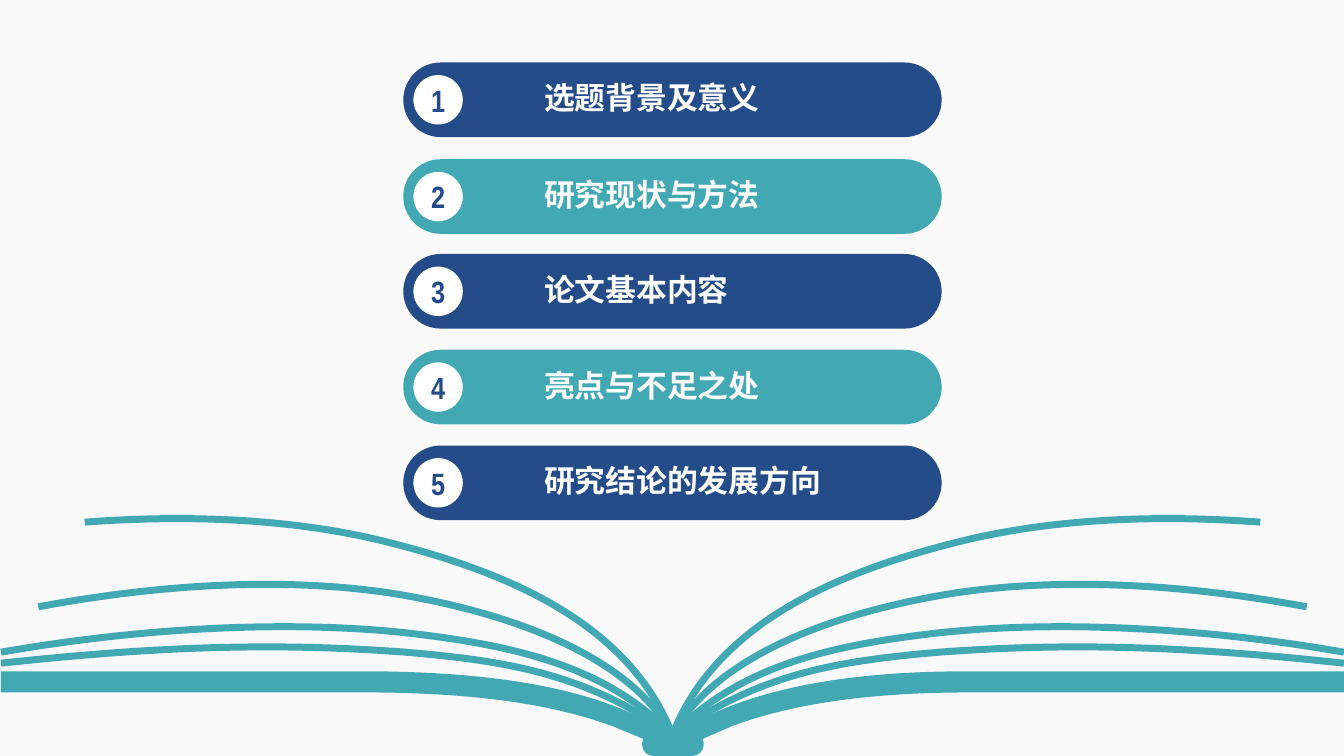
from pptx import Presentation
from pptx import util as u
from pptx.dml.color import RGBColor
from pptx.enum import shapes, text
from pptx.oxml.ns import qn
from lxml import etree

NAVY = RGBColor(0x23, 0x4C, 0x89)
TEAL = RGBColor(0x42, 0xA9, 0xB4)
WHITE = RGBColor(0xFF, 0xFF, 0xFF)
PAPER = RGBColor(0xF9, 0xF9, 0xF9)
HAN, NUM = "Noto Sans CJK SC", "Arial Narrow"

TOPICS = [
    (0.62, "选题背景及意义"),
    (1.58, "研究现状与方法"),
    (2.52, "论文基本内容"),
    (3.47, "亮点与不足之处"),
    (4.42, "研究结论的发展方向"),
]
WIDE, HIGH = 13.33, 7.5
LEFT, BAR_W, BAR_H, DOT = 4, 5.34, 0.74, 0.49

SPINE = (6.67, 7.29)
PAGES = [
    [SPINE, (6.05, 6.66, 5.25, 6.43, 4.21, 6.3), (3.23, 6.17, 1.73, 6.17, 0.01, 6.47)],
    [SPINE, (5.81, 6.69, 5.07, 6.56, 4.02, 6.47), (2.81, 6.38, 1.67, 6.4, 0.01, 6.58)],
    [SPINE, (6.22, 6.46, 4.94, 6.05, 3.85, 5.88), (2.89, 5.74, 1.72, 5.77, 0.38, 6.02)],
    [SPINE, (6.24, 6.19, 5.05, 5.69, 3.93, 5.4), (2.99, 5.15, 1.92, 5.1, 0.84, 5.18)],
]
COVER = [
    (0.01, 6.66), (3.46, 6.66) * 3, (4.79, 6.65, 5.73, 6.8, 6.4, 7.14),
    (6.61, 7.26), (6.74, 7.26), (6.96, 7.13),
    (7.66, 6.78, 8.59, 6.66, 9.59, 6.66), (13.34, 6.66) * 3, (13.34, 6.87),
    (13.34, 6.87, 13.34, 6.87, 9.59, 6.87), (8.73, 6.87, 7.92, 6.96, 7.27, 7.2),
    (6.97, 7.33), (6.98, 7.37), (6.98, 7.39), (6.98, 7.45, 6.93, 7.5, 6.86, 7.5),
    (6.67, 7.5), (6.67, 7.5), (6.67, 7.5), (6.48, 7.5),
    (6.42, 7.5, 6.37, 7.45, 6.37, 7.39), (6.37, 7.37), (6.38, 7.33), (6.09, 7.21),
    (5.45, 6.97, 4.6, 6.86, 3.46, 6.87), (3.46, 6.87, 3.46, 6.87, 0.01, 6.87),
    (0.01, 6.8), (0.01, 6.66, 0.01, 6.66, 0.01, 6.66),
]


def mirror(part):
    return tuple(v if i % 2 else 2 * SPINE[0] - v for i, v in enumerate(part))


def outline(home, parts, close):
    pts = [(u.Inches(p[i]), u.Inches(p[i + 1])) for p in parts for i in range(0, len(p), 2)]
    pen = home.build_freeform(*pts[0])
    pen.add_line_segments(pts[1:], close=close)
    form = pen.convert_to_shape()
    form.shadow.inherit = False
    legs = iter(list(form._element.iter(qn("a:lnTo"))))
    for part in parts[1:]:
        leg = next(legs)
        if len(part) == 6:
            leg.addprevious(curve := etree.Element(qn("a:cubicBezTo")))
            for step in (leg, next(legs), next(legs)):
                curve.append(step[0])
                step.getparent().remove(step)
    return form


def paint(form, color):
    form.shadow.inherit = False
    form.fill.solid()
    form.fill.fore_color.rgb = color
    form.line.fill.background()


def block(slide, kind, color, *box):
    form = slide.shapes.add_shape(kind, *map(u.Inches, box))
    paint(form, color)
    return form


def label(form, words, font, color, align, left, right):
    frame = form.text_frame
    frame.word_wrap = True
    frame.vertical_anchor = text.MSO_ANCHOR.MIDDLE
    frame.margin_left, frame.margin_right = u.Inches(left), u.Inches(right)
    para = frame.paragraphs[0]
    para.alignment = align
    run = para.add_run()
    run.text = words
    run.font.size = u.Pt(22)
    run.font.bold = True
    run.font.name = font
    run.font.color.rgb = color
    etree.SubElement(run.font._element, qn("a:ea")).set("typeface", font)
    return para


def book(slide):
    group = slide.shapes.add_group_shape()
    for page in PAGES:
        for side in (page, [mirror(part) for part in page]):
            form = outline(group.shapes, side, False)
            form.fill.background()
            form.line.color.rgb = TEAL
            form.line.width = u.Pt(5)
    paint(outline(slide.shapes, COVER, True), TEAL)


def agenda(slide):
    kinds = shapes.MSO_SHAPE
    for i, (top, topic) in enumerate(TOPICS):
        bar = block(slide, kinds.ROUNDED_RECTANGLE, TEAL if i % 2 else NAVY,
                    LEFT, top, BAR_W, BAR_H)
        bar.adjustments[0] = 0.5
        para = label(bar, topic, HAN, WHITE, text.PP_ALIGN.LEFT, 0.31, 0.1)
        para.line_spacing = 0.9
        props = para._p.get_or_add_pPr()
        props.set("marL", str(u.Inches(0.98)))
        props.set("indent", "0")
        dot = block(slide, kinds.OVAL, WHITE,
                    LEFT + 0.1, top + (BAR_H - DOT) / 2, DOT, DOT)
        label(dot, str(i + 1), NUM, NAVY, text.PP_ALIGN.CENTER, 0, 0)


def main():
    deck = Presentation()
    deck.slide_width, deck.slide_height = u.Inches(WIDE), u.Inches(HIGH)
    slide = deck.slides.add_slide(deck.slide_layouts[6])
    block(slide, shapes.MSO_SHAPE.RECTANGLE, PAPER, 0, 0, WIDE, HIGH)
    book(slide)
    agenda(slide)
    deck.save("out.pptx")


if __name__ == "__main__":
    main()
